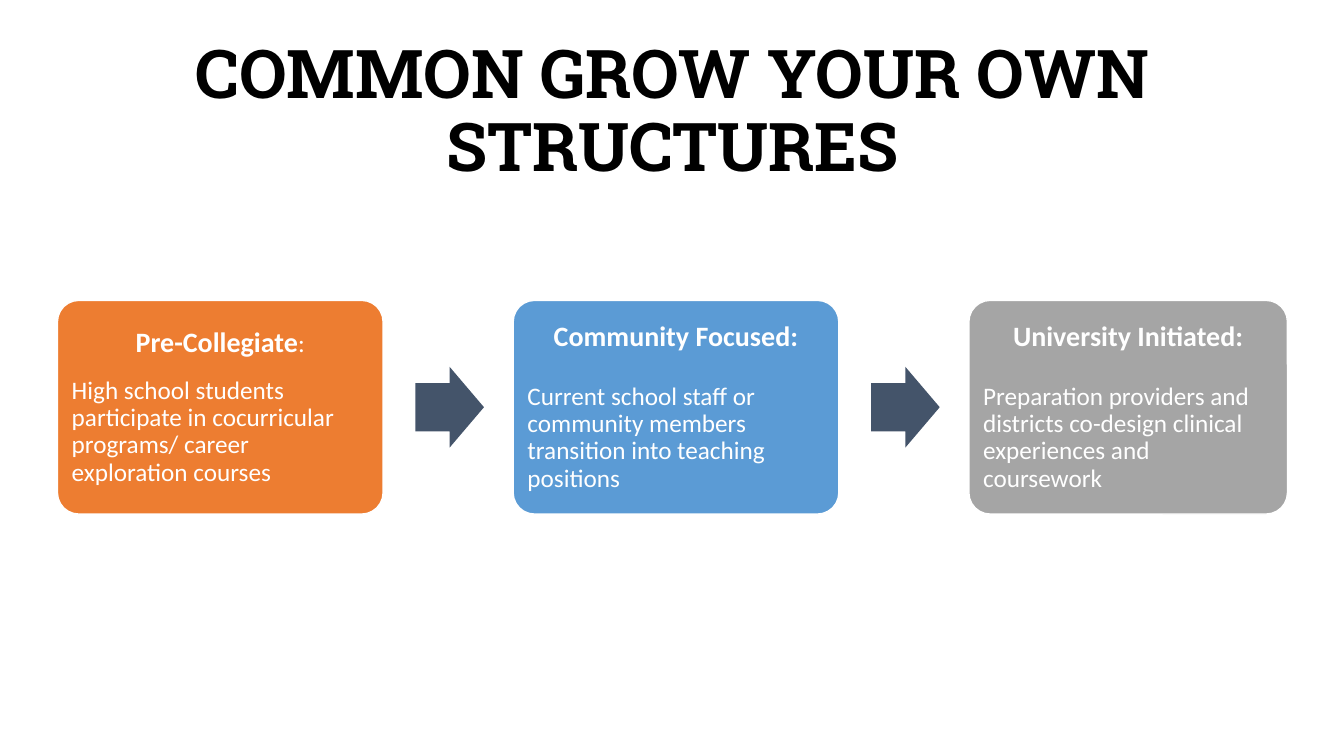
from pptx import Presentation
from pptx.dml.color import RGBColor
from pptx.enum.shapes import MSO_SHAPE as Kind
from pptx.enum.text import MSO_ANCHOR as Anchor, MSO_AUTO_SIZE as Auto, PP_ALIGN as Align
from pptx.util import Inches, Pt

# Content
TITLE = "COMMON GROW YOUR OWN STRUCTURES"
HUES = {"ink": "000000", "white": "FFFFFF", "arrow": "44546A",
        "orange": "ED7D31", "blue": "5B9BD5", "gray": "A5A5A5"}
# Each card: fill, width, gap below the heading (pt), heading runs (text, size, bold), body
CARDS = [
    ("orange", 3.23, 14, [("Pre-Collegiate", 20, True), (":", 18, False)],
     "High school students participate in cocurricular programs/ career exploration courses"),
    ("blue", 3.23, 22.5, [("Community Focused:", 20, True)],
     "Current school staff or community members transition into teaching positions"),
    ("gray", 3.16, 22.5, [("University Initiated:", 20, True)],
     "Preparation providers and districts co-design clinical experiences and coursework"),
]

# Grid, in inches
WIDE, HIGH = 13.33, 7.5
LEFT, STEP = 0.57, 4.52
TOP, TALL = 2.98, 2.12
ARROW_X, ARROW_W, ARROW_H = 3.55, 0.68, 0.8
PAD = 0.14


def hue(name):
    return RGBColor.from_string(HUES[name])


def add_run(para, text, size, bold, font="Calibri", color="white"):
    run = para.add_run()
    run.text = text
    run.font.name, run.font.size, run.font.bold = font, Pt(size), bold
    run.font.color.rgb = hue(color)


def set_para(para, align, after=0):
    para.alignment, para.line_spacing = align, 0.9
    para.space_before, para.space_after = Pt(0), Pt(after)


def add_shape(kind, box, fill, adjust):
    shape = slide.shapes.add_shape(kind, *map(Inches, box))
    shape.shadow.inherit = False
    shape.fill.solid()
    shape.fill.fore_color.rgb = hue(fill)
    for i, part in enumerate(adjust):
        shape.adjustments[i] = part
    return shape


deck = Presentation()
deck.slide_width, deck.slide_height = Inches(WIDE), Inches(HIGH)
slide = deck.slides.add_slide(deck.slide_layouts[5])

# Title
title = slide.shapes.title
title.left, title.top, title.width, title.height = map(Inches, (LEFT, 0.4, 12.2, 1.45))
frame = title.text_frame
frame.word_wrap, frame.auto_size = True, Auto.NONE
frame.vertical_anchor = Anchor.MIDDLE
set_para(frame.paragraphs[0], Align.CENTER)
add_run(frame.paragraphs[0], TITLE, 48, True, "Roboto Slab", "ink")

# Cards, with an arrow between neighbours
for col, (fill, width, gap, head, body) in enumerate(CARDS):
    x = LEFT + col * STEP
    card = add_shape(Kind.ROUNDED_RECTANGLE, (x, TOP, width, TALL), fill, [0.1])
    card.line.color.rgb, card.line.width = hue("white"), Pt(1)
    frame = card.text_frame
    frame.word_wrap, frame.vertical_anchor = True, Anchor.MIDDLE
    # The rounded corners add 0.06 to each inset
    frame.margin_left = frame.margin_right = Inches(PAD - 0.06)
    frame.margin_top = frame.margin_bottom = Inches(PAD - 0.06)
    para = frame.paragraphs[0]
    set_para(para, Align.CENTER, gap)
    for run in head:
        add_run(para, *run)
    para = frame.add_paragraph()
    set_para(para, Align.LEFT)
    add_run(para, body, 18, False)

    if col < len(CARDS) - 1:
        y = TOP + (TALL - ARROW_H) / 2
        arrow = add_shape(Kind.RIGHT_ARROW, (x + ARROW_X, y, ARROW_W, ARROW_H),
                          "arrow", [0.6, 0.5])
        arrow.line.fill.background()

deck.save("out.pptx")
